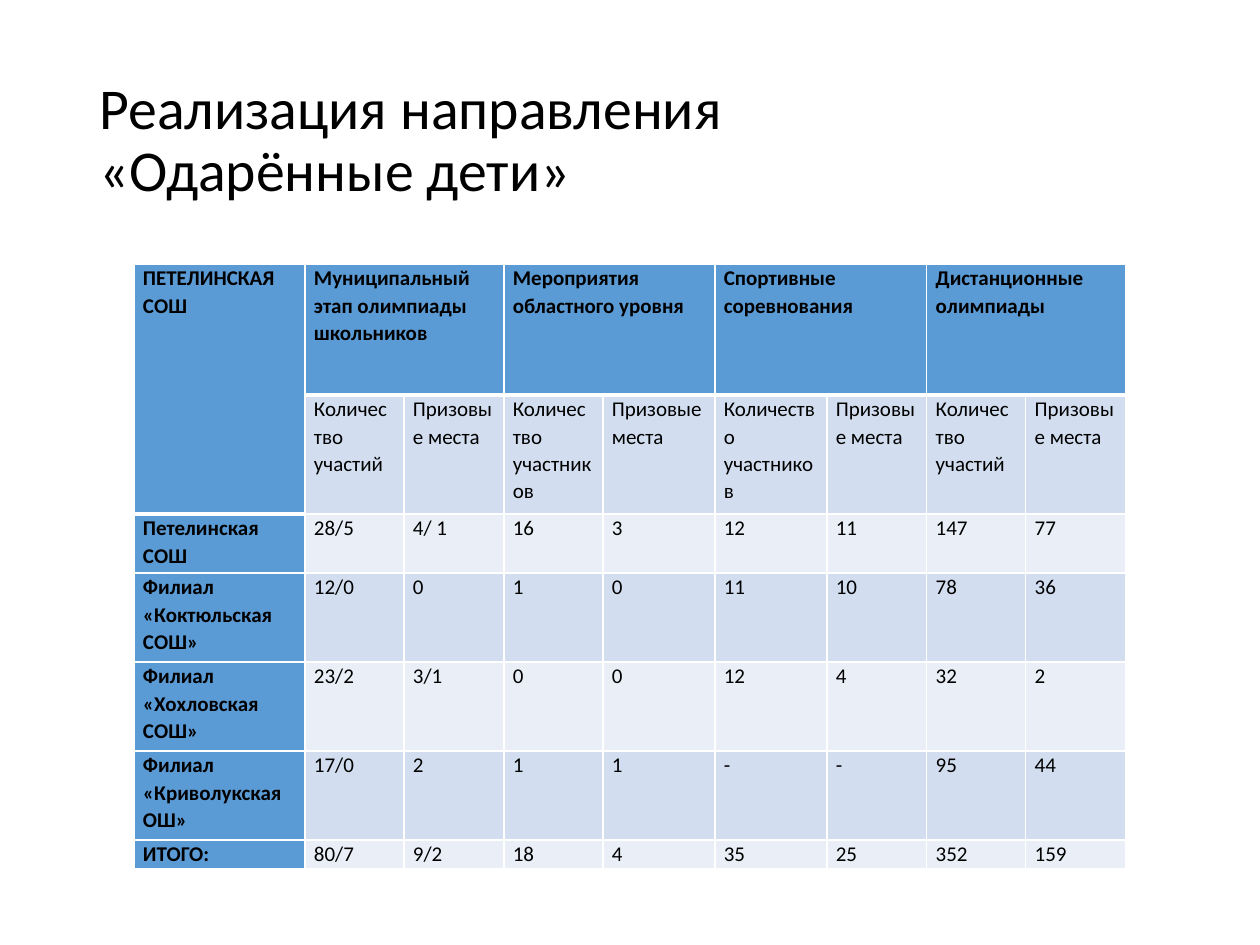
from copy import deepcopy

from lxml import etree
from pptx import Presentation
from pptx import util as u
from pptx.dml.color import RGBColor
from pptx.enum import text as t
from pptx.oxml import ns

PX = 914400 / 126
FONT = "Calibri"
BLACK = RGBColor(0x00, 0x00, 0x00)
WHITE = RGBColor(0xFF, 0xFF, 0xFF)
BLUE = RGBColor(0x5B, 0x9B, 0xD5)
PALE_BLUE = RGBColor(0xD2, 0xDE, 0xEF)
PALEST_BLUE = RGBColor(0xEA, 0xEF, 0xF7)

TITLE = "Реализация направления \n«Одарённые дети»"
COLUMN_WIDTHS = [171, 99, 100, 99, 112, 112, 100, 99, 100]
ROW_HEIGHTS = [131, 119, 59, 89, 89, 89, 29]
ENTRIES, ENTRANTS, PRIZES = "Количество участий", "Количество участников", "Призовые места"
ROWS = [
    ["ПЕТЕЛИНСКАЯ СОШ", "Муниципальный этап олимпиады школьников", "",
     "Мероприятия областного уровня", "", "Спортивные соревнования", "",
     "Дистанционные олимпиады", ""],
    ["", ENTRIES, PRIZES, ENTRANTS, PRIZES, ENTRANTS, PRIZES, ENTRIES, PRIZES],
    ["Петелинская СОШ", "28/5", "4/ 1", "16", "3", "12", "11", "147", "77"],
    ["Филиал «Коктюльская СОШ»", "12/0", "0", "1", "0", "11", "10", "78", "36"],
    ["Филиал «Хохловская СОШ»", "23/2", "3/1", "0", "0", "12", "4", "32", "2"],
    ["Филиал «Криволукская ОШ»", "17/0", "2", "1", "1", "-", "-", "95", "44"],
    ["ИТОГО:", "80/7", "9/2", "18", "4", "35", "25", "352", "159"],
]


def px(length):
    """Turn pixels into EMU."""
    return u.Emu(round(length * PX))


def write(frame, content, size=12, bold=False, color=BLACK, spacing=1.07):
    """Fill a text frame with one formatted paragraph."""
    paragraph = frame.paragraphs[0]
    paragraph.text = content
    paragraph.alignment = t.PP_ALIGN.LEFT
    paragraph.line_spacing = spacing
    for run in paragraph.runs:
        run.font.name = FONT
        run.font.size = u.Pt(size)
        run.font.bold = bold
        run.font.color.rgb = color
    for line_break in paragraph._p.findall(ns.qn("a:br")):
        line_break.append(deepcopy(paragraph.runs[0].font._element))


def set_borders(cell, bottom):
    """Give a cell white borders, with its own bottom width in points."""
    properties = cell._tc.get_or_add_tcPr()
    for index, (side, width) in enumerate([("L", 1), ("R", 1), ("T", 1), ("B", bottom)]):
        line = etree.Element(ns.qn(f"a:ln{side}"), w=str(u.Pt(width)))
        fill = etree.SubElement(line, ns.qn("a:solidFill"))
        etree.SubElement(fill, ns.qn("a:srgbClr"), val=str(WHITE))
        properties.insert(index, line)


def add_title(slide, left, top, width, height):
    """Place and format the title placeholder."""
    title = slide.shapes.title
    title.left, title.top, title.width, title.height = map(px, (left, top, width, height))
    frame = title.text_frame
    frame.word_wrap = True
    frame.auto_size = t.MSO_AUTO_SIZE.NONE
    frame.vertical_anchor = t.MSO_ANCHOR.MIDDLE
    write(frame, TITLE, size=33, spacing=0.9)


def add_results_table(slide, left, top):
    """Add the table of results by school and event."""
    width, height = sum(COLUMN_WIDTHS), sum(ROW_HEIGHTS)
    table = slide.shapes.add_table(len(ROWS), len(COLUMN_WIDTHS),
                                   px(left), px(top), px(width), px(height)).table
    table.first_row = table.horz_banding = False
    for column, column_width in zip(table.columns, COLUMN_WIDTHS):
        column.width = px(column_width)
    for row, row_height in zip(table.rows, ROW_HEIGHTS):
        row.height = px(row_height)
    for r, values in enumerate(ROWS):
        for c, value in enumerate(values):
            cell = table.cell(r, c)
            heading = r == 0 or c == 0
            cell.margin_left, cell.margin_right = px(9), px(10)
            cell.margin_top = cell.margin_bottom = 0
            cell.fill.solid()
            cell.fill.fore_color.rgb = BLUE if heading else PALE_BLUE if r % 2 else PALEST_BLUE
            set_borders(cell, bottom=3 if r == 0 or (r, c) == (1, 0) else 1)
            write(cell.text_frame, value, bold=heading)
    table.cell(0, 0).merge(table.cell(1, 0))
    for c in range(1, len(COLUMN_WIDTHS), 2):
        table.cell(0, c).merge(table.cell(0, c + 1))


def main():
    """Build and save the presentation."""
    presentation = Presentation()
    presentation.slide_width, presentation.slide_height = px(1260), px(945)
    slide = presentation.slides.add_slide(presentation.slide_layouts[5])
    slide.background.fill.solid()
    slide.background.fill.fore_color.rgb = WHITE
    add_title(slide, 87, 50, 1086, 183)
    add_results_table(slide, 134, 264)
    presentation.save("out.pptx")


if __name__ == "__main__":
    main()
